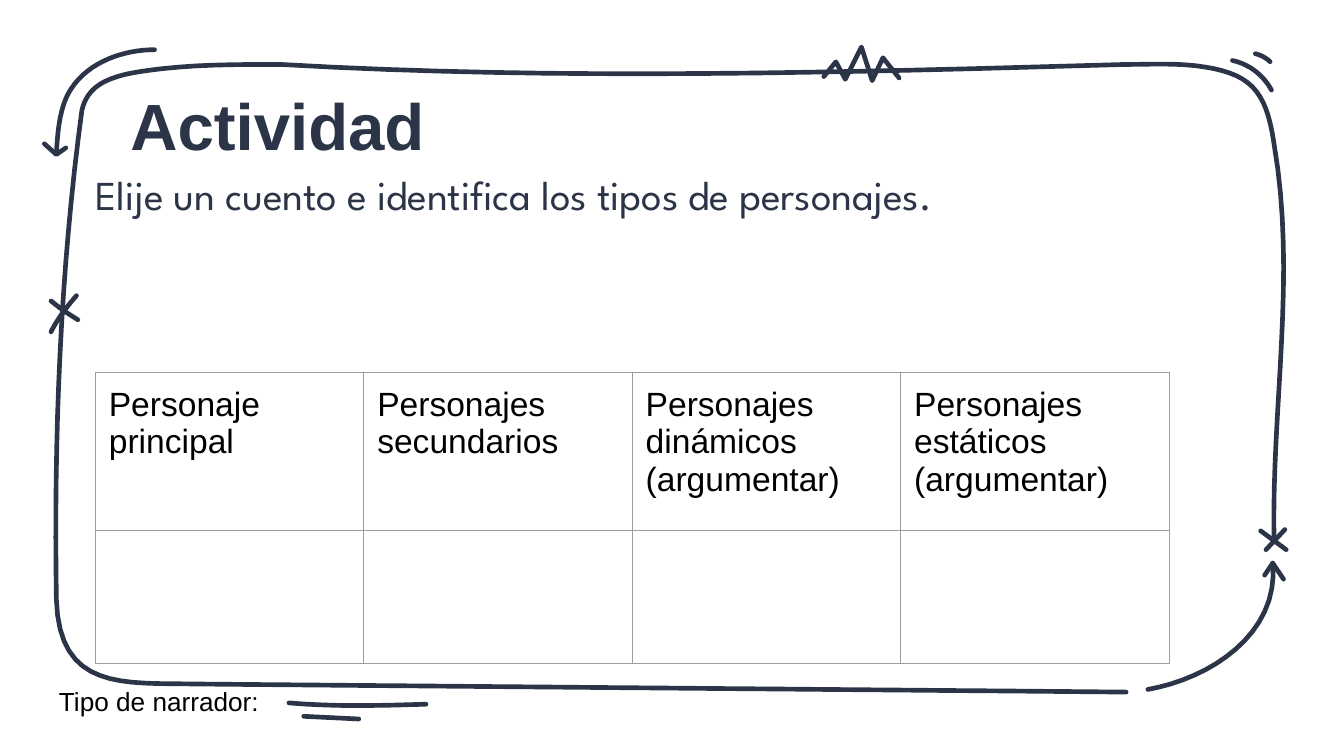
"""Builds the activity slide: a hand-drawn frame around a character table."""
from dataclasses import dataclass

from lxml.etree import SubElement
from pptx import Presentation
from pptx.dml.color import RGBColor
from pptx.enum.text import MSO_ANCHOR
from pptx.oxml.ns import qn
from pptx.util import Emu, Inches, Pt

SLIDE_WIDTH, SLIDE_HEIGHT = Inches(10), Inches(5.625)
COLUMNS = 100
CELL = SLIDE_WIDTH / COLUMNS


@dataclass(frozen=True)
class Theme:
    """Colours, fonts and sizes of the slide."""
    ink: RGBColor = RGBColor(0x2B, 0x35, 0x47)
    black: RGBColor = RGBColor(0, 0, 0)
    border: str = "9E9E9E"
    sans: str = "Arial"
    display: str = "League Spartan"
    title: Pt = Pt(35)
    body: Pt = Pt(22)
    table: Pt = Pt(18)
    note: Pt = Pt(14)
    stroke: Pt = Pt(2.5)
    hairline: Pt = Pt(0.75)


THEME = Theme()
HEADERS = ["Personaje\nprincipal", "Personajes secundarios",
           "Personajes dinámicos\n(argumentar)", "Personajes estáticos\n(argumentar)"]


def grid(cells):
    """Turn a count of grid cells into a length."""
    return Emu(round(cells * CELL))


def curve(*points, steps=16):
    """Sample a chain of cubic Bézier arcs."""
    samples = [points[0]]
    for first in range(0, len(points) - 1, 3):
        arc = points[first:first + 4]
        for step in range(1, steps + 1):
            t = step / steps
            weights = ((1 - t) ** 3, 3 * t * (1 - t) ** 2, 3 * t ** 2 * (1 - t), t ** 3)
            samples.append(tuple(sum(w * point[axis] for w, point in zip(weights, arc))
                                 for axis in (0, 1)))
    return samples


FRAME = [curve((94.8, 40.2), (94.6, 30.2), (96.5, 20.5), (94.8, 10.7),
               (94.2, 6.6), (93, 5.4), (89, 4.9), (87.2, 4.7), (85.5, 4.8), (83.7, 4.8),
               (62.8, 5.4), (41.8, 6), (20.9, 4.8), (18.9, 4.8), (16.8, 4.8), (14.8, 4.9),
               (12.9, 5), (11, 5.2), (9.5, 5.5), (7.8, 5.9), (6.5, 6.5), (6.1, 8.2),
               (4.5, 20), (4, 32.5), (4.2, 44.6), (4.4, 51.4), (9.2, 50.8), (14.5, 50.9),
               (37.5, 51.1), (60.9, 51.3), (83.8, 51.5))]
UNDERLINE_LONG = [curve((21.5, 52.3), (24.9, 52.6), (28.3, 52.5), (31.7, 52.4))]
UNDERLINE_SHORT = [[(22.6, 53.3), (26.7, 53.5)]]
ZIGZAG = [[(61.3, 5.7), (62.2, 4.6), (62.9, 5.9), (64.1, 3.5),
           (64.9, 6), (65.7, 4.3), (66.9, 5.8)]]
CORNER_LONG = [curve((91.7, 4.5), (93, 4.8), (94, 5.6), (94.6, 6.7))]
CORNER_SHORT = [curve((93.4, 4), (93.8, 4.1), (94.2, 4.3), (94.5, 4.6))]
LEFT_CROSS = [[(3.8, 22.4), (4.7, 23.1), (5.8, 23.8)],
              curve((5.7, 22), (5, 22.8), (4.3, 23.7), (3.8, 24.7))]
RIGHT_CROSS = [[(93.8, 39.5), (95.7, 40.9)], [(95.6, 39.4), (94.2, 40.9)]]
RIGHT_ARROW = [curve((85.4, 51.3), (90, 50.5), (95.2, 47.2), (94.7, 41.9)),
               [(94.1, 42.8), (94.7, 41.9), (95.5, 43.1)]]
LEFT_ARROW = [curve((11.5, 3.7), (9.2, 3.7), (6.6, 4.6), (5.3, 6.6),
                    (4.5, 7.8), (4.3, 9.5), (4.2, 11.4)),
              [(3.3, 10.7), (4.2, 11.5), (4.9, 11)]]
DOODLES = [FRAME, UNDERLINE_LONG, UNDERLINE_SHORT, ZIGZAG, CORNER_LONG, CORNER_SHORT,
           LEFT_CROSS, RIGHT_CROSS, RIGHT_ARROW, LEFT_ARROW]


def add_doodle(slide, strokes):
    """Draw pen strokes with round ends as one open outline."""
    contours = [[(grid(x), grid(y)) for x, y in stroke] for stroke in strokes]
    builder = slide.shapes.build_freeform(*contours[0][0])
    for index, contour in enumerate(contours):
        if index:
            builder.move_to(*contour[0])
        builder.add_line_segments(contour[1:], close=False)
    shape = builder.convert_to_shape()
    shape.shadow.inherit = False
    shape.fill.background()
    shape.line.color.rgb = THEME.ink
    shape.line.width = THEME.stroke
    outline = shape.element.spPr.find(qn("a:ln"))
    outline.set("cap", "rnd")
    SubElement(outline, qn("a:round"))


def style(paragraph, size, color, font=THEME.sans, bold=False):
    """Set the type of a paragraph."""
    paragraph.font.name = font
    paragraph.font.size = size
    paragraph.font.bold = bold
    paragraph.font.color.rgb = color


def set_margins(target, margin):
    """Give a text frame or a table cell equal margins."""
    target.margin_left = target.margin_right = margin
    target.margin_top = target.margin_bottom = margin


def add_text(slide, text, box, margin, size, color, **font):
    """Add a wrapped text box and return its text frame."""
    frame = slide.shapes.add_textbox(*map(grid, box)).text_frame
    frame.word_wrap = True
    set_margins(frame, grid(margin))
    frame.text = text
    style(frame.paragraphs[0], size, color, **font)
    return frame


def add_borders(cell):
    """Draw a thin line on every side of a table cell."""
    properties = cell._tc.get_or_add_tcPr()
    for index, side in enumerate(("lnL", "lnR", "lnT", "lnB")):
        line = properties.makeelement(qn(f"a:{side}"), {"w": str(THEME.hairline)})
        fill = SubElement(line, qn("a:solidFill"))
        SubElement(fill, qn("a:srgbClr"), val=THEME.border)
        properties.insert(index, line)


def add_character_table(slide, box, row_heights):
    """Add the table of character types with an empty answer row."""
    table = slide.shapes.add_table(len(row_heights), len(HEADERS), *map(grid, box)).table
    table.first_row = table.horz_banding = False
    for row, height in zip(table.rows, row_heights):
        row.height = grid(height)
    for cell, header in zip(table.rows[0].cells, HEADERS):
        cell.text = header
    for cell in table.iter_cells():
        cell.fill.background()
        set_margins(cell, grid(1))
        add_borders(cell)
        for paragraph in cell.text_frame.paragraphs:
            style(paragraph, THEME.table, THEME.black)


def main():
    """Build and save the slide."""
    presentation = Presentation()
    presentation.slide_width, presentation.slide_height = SLIDE_WIDTH, SLIDE_HEIGHT
    slide = presentation.slides.add_slide(presentation.slide_layouts[6])
    for strokes in DOODLES:
        add_doodle(slide, strokes)
    title = add_text(slide, "Actividad", (9.7, 7.5, 70.3, 4.3), 0,
                     THEME.title, THEME.ink, bold=True)
    title.vertical_anchor = MSO_ANCHOR.MIDDLE
    title.paragraphs[0].line_spacing = 0.9
    body = add_text(slide, "Elije un cuento e identifica los tipos de personajes.",
                    (7.1, 12.6, 85.4, 17.2), 0, THEME.body, THEME.ink, font=THEME.display)
    body.paragraphs[0].space_after = Pt(10)
    add_character_table(slide, (7.1, 27.7, 79.9, 21.7), (11.8, 9.9))
    add_text(slide, "Tipo de narrador:", (3.4, 50, 32.8, 4.4), 1, THEME.note, THEME.black)
    presentation.save("out.pptx")


if __name__ == "__main__":
    main()
